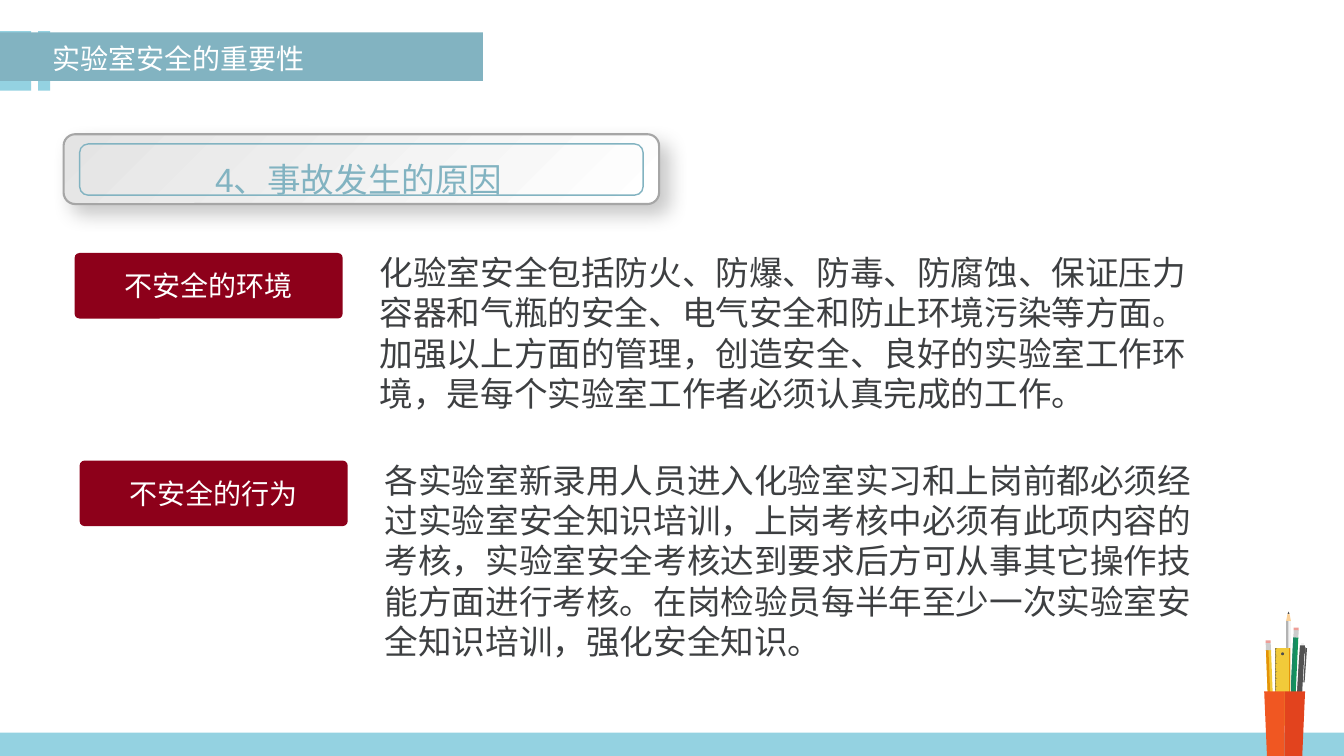
from lxml import etree
from pptx import Presentation
from pptx.dml.color import RGBColor
from pptx.enum.shapes import MSO_SHAPE
from pptx.enum.text import MSO_ANCHOR, PP_ALIGN
from pptx.oxml.ns import qn
from pptx.util import Pt

RECT, ROUND, OVAL = MSO_SHAPE.RECTANGLE, MSO_SHAPE.ROUNDED_RECTANGLE, MSO_SHAPE.OVAL
TOP, MIDDLE = MSO_ANCHOR.TOP, MSO_ANCHOR.MIDDLE
LEFT, CENTER, JUSTIFY = PP_ALIGN.LEFT, PP_ALIGN.CENTER, PP_ALIGN.JUSTIFY

SKY, TEAL, RED, WHITE, INK = "94D2E1", "82B3C1", "8D001A", "FFFFFF", "3D3F41"
GREY, DARK, PEN = "CCCCCC", "4D4D4D", "525252"
YELLOW, AMBER, PINK, SKIN = "F1CA3A", "E49307", "ED9D97", "FBD199"

REASONS = [
    (53.3, 180.7, "不安全的环境",
     "化验室安全包括防火、防爆、防毒、防腐蚀、保证压力容器和气瓶的安全、电气安全和防止环境污染等方面。"
     "加强以上方面的管理，创造安全、良好的实验室工作环境，是每个实验室工作者必须认真完成的工作。"),
    (56.9, 329, "不安全的行为",
     "各实验室新录用人员进入化验室实习和上岗前都必须经过实验室安全知识培训，上岗考核中必须有此项内容的考核，"
     "实验室安全考核达到要求后方可从事其它操作技能方面进行考核。"
     "在岗检验员每半年至少一次实验室安全知识培训，强化安全知识。"),
]


def rgb(hex_colour):
    return RGBColor.from_string(hex_colour)


class Deck:
    font = "Arial"

    def __init__(self, width, height):
        self.prs = Presentation()
        self.prs.slide_width, self.prs.slide_height = Pt(width), Pt(height)
        self.s = self.prs.slides.add_slide(self.prs.slide_layouts[6])

    def paint(self, sp, fill=None, line=None, weight=1):
        sp.shadow.inherit = False
        if fill:
            sp.fill.solid()
            sp.fill.fore_color.rgb = rgb(fill)
        else:
            sp.fill.background()
        if line:
            sp.line.color.rgb = rgb(line)
            sp.line.width = Pt(weight)
        else:
            sp.line.fill.background()
        return sp

    def shape(self, kind, x, y, w, h, fill=None, line=None, weight=1, radius=None):
        sp = self.s.shapes.add_shape(kind, Pt(x), Pt(y), Pt(w), Pt(h))
        if radius is not None:
            sp.adjustments[0] = radius
        return self.paint(sp, fill, line, weight)

    def polygon(self, points, fill):
        pts = [(Pt(x), Pt(y)) for x, y in points]
        builder = self.s.shapes.build_freeform(*pts[0], scale=1.0)
        builder.add_line_segments(pts[1:], close=True)
        return self.paint(builder.convert_to_shape(), fill)

    def label(self, sp, text, size, colour, align=LEFT, anchor=TOP, spacing=None):
        tf = sp.text_frame
        tf.word_wrap = True
        tf.vertical_anchor = anchor
        p = tf.paragraphs[0]
        p.alignment = align
        if spacing:
            p.line_spacing = spacing
        r = p.add_run()
        r.text = text
        r.font.name, r.font.size = self.font, Pt(size)
        r.font.color.rgb = rgb(colour)

    def text(self, x, y, w, h, *args, **style):
        box = self.s.shapes.add_textbox(Pt(x), Pt(y), Pt(w), Pt(h))
        self.label(box, *args, **style)

    def gradient(self, sp, first, last):
        """Fill from the top left corner to the bottom right one."""
        sp.fill.gradient()
        sp.fill.gradient_angle = 315
        for stop, colour in zip(sp.fill.gradient_stops, (first, last)):
            stop.color.rgb = rgb(colour)

    def drop_shadow(self, sp, blur, distance, alpha):
        effects = sp.element.spPr.find(qn("a:effectLst"))
        shadow = etree.SubElement(effects, qn("a:outerShdw"), blurRad=str(Pt(blur)),
                                  dist=str(Pt(distance)), dir="2700000",
                                  algn="tl", rotWithShape="0")
        colour = etree.SubElement(shadow, qn("a:srgbClr"), val="000000")
        etree.SubElement(colour, qn("a:alpha"), val=str(alpha * 1000))

    def pencil(self, x, y, lean, body, shade, ferrule, eraser):
        """Draw a pencil standing on its tip; x, y is the top left of its body."""
        w, length = 3.6, 62
        foot = y + length
        for width, colour in ((w, body), (w / 2, shade)):
            self.polygon([(x, y), (x + width, y), (x + lean + width, foot),
                          (x + lean, foot)], colour)
        top = x - lean * 0.1
        self.polygon([(x, y), (x + w, y), (top + w, y - 5.2), (top, y - 5.2)], ferrule)
        self.shape(RECT, top, y - 7, w, 1.8, eraser)

    def upright_pencil(self, x, y):
        """Draw a pencil with its tip up; x, y is the top left of its body."""
        self.shape(RECT, x, y, 3.4, 62, "F2F2F2")
        self.shape(RECT, x, y, 1.7, 62, "B3B3B3")
        self.polygon([(x, y), (x + 1, y - 5), (x + 2.4, y - 5), (x + 3.4, y)], SKIN)
        self.polygon([(x + 1, y - 5), (x + 1.7, y - 6.6), (x + 2.4, y - 5)], DARK)

    def ruler(self, x, y, w, h, ticks):
        self.shape(RECT, x, y, w, h, YELLOW)
        self.shape(RECT, x + w - 0.7, y, 0.7, h, AMBER)
        self.shape(OVAL, x + 4.3, y + 3, 2.1, 2.1, DARK)
        self.shape(RECT, x, y, 0.2, h, DARK)
        for i in range(ticks):
            length = 0.7 if i % 5 else 1.4
            self.shape(RECT, x, y + i * 1.09, length, 0.2, DARK)

    def cup(self, left, top, right, bottom, taper):
        middle = (left + right) / 2
        for edge, inset, colour in ((left, taper, "F05722"), (right, -taper, "E2431E")):
            self.polygon([(edge, top), (edge + inset, bottom), (middle, bottom),
                          (middle, top)], colour)


def main():
    deck = Deck(960, 540)
    deck.shape(RECT, 0, 523.3, 960, 16.7, SKY)

    deck.pencil(923.8, 455.3, -2.9, "13955C", "1A8763", GREY, PINK)
    deck.upright_pencil(918.7, 443.5)
    deck.pencil(904.3, 464.4, 2.4, YELLOW, AMBER, GREY, PINK)
    deck.shape(RECT, 929.4, 459.4, 1.9, 3.4, "F2F2F2")
    deck.pencil(928.1, 468, -3.6, PEN, PEN, PEN, PEN)
    deck.shape(RECT, 931.6, 462.4, 1, 4.5, PEN)
    deck.polygon([(932.6, 463), (933.6, 463), (931.9, 487.4), (931, 487.4)], PEN)
    deck.ruler(910.8, 463, 10.8, 55.4, 28)
    deck.cup(903, 493.9, 932.2, 540, 2)

    for x, width in ((0, 22.3), (27.2, 8.6)):
        deck.shape(RECT, x, 22.3, width, 42.5, SKY)
    deck.shape(RECT, 0, 23.2, 345, 34.6, TEAL)
    deck.text(30.2, 23.2, 282, 34.6, "实验室安全的重要性", 20, WHITE,
              align=JUSTIFY, anchor=MIDDLE, spacing=1.1)

    panel = deck.shape(ROUND, 45.4, 95.9, 425.4, 49.9, WHITE, "A6A6A6", 1.5)
    deck.gradient(panel, "E4E4E4", WHITE)
    deck.drop_shadow(panel, 14, 9, 22)
    deck.shape(ROUND, 56.9, 102.8, 402.5, 36.6, None, TEAL)
    deck.text(53.3, 98.6, 406, 44.6, "4、事故发生的原因", 24, TEAL,
              align=CENTER, anchor=MIDDLE, spacing=1.5)

    for x, y, title, detail in REASONS:
        tag = deck.shape(ROUND, x, y, 191.5, 46.8, RED, radius=0.076)
        deck.label(tag, title, 20, WHITE, align=CENTER, anchor=MIDDLE)
        deck.text(x + 210.9, y - 4.3, 607, 152.6, detail, 24, INK)

    deck.prs.save("out.pptx")


if __name__ == "__main__":
    main()
